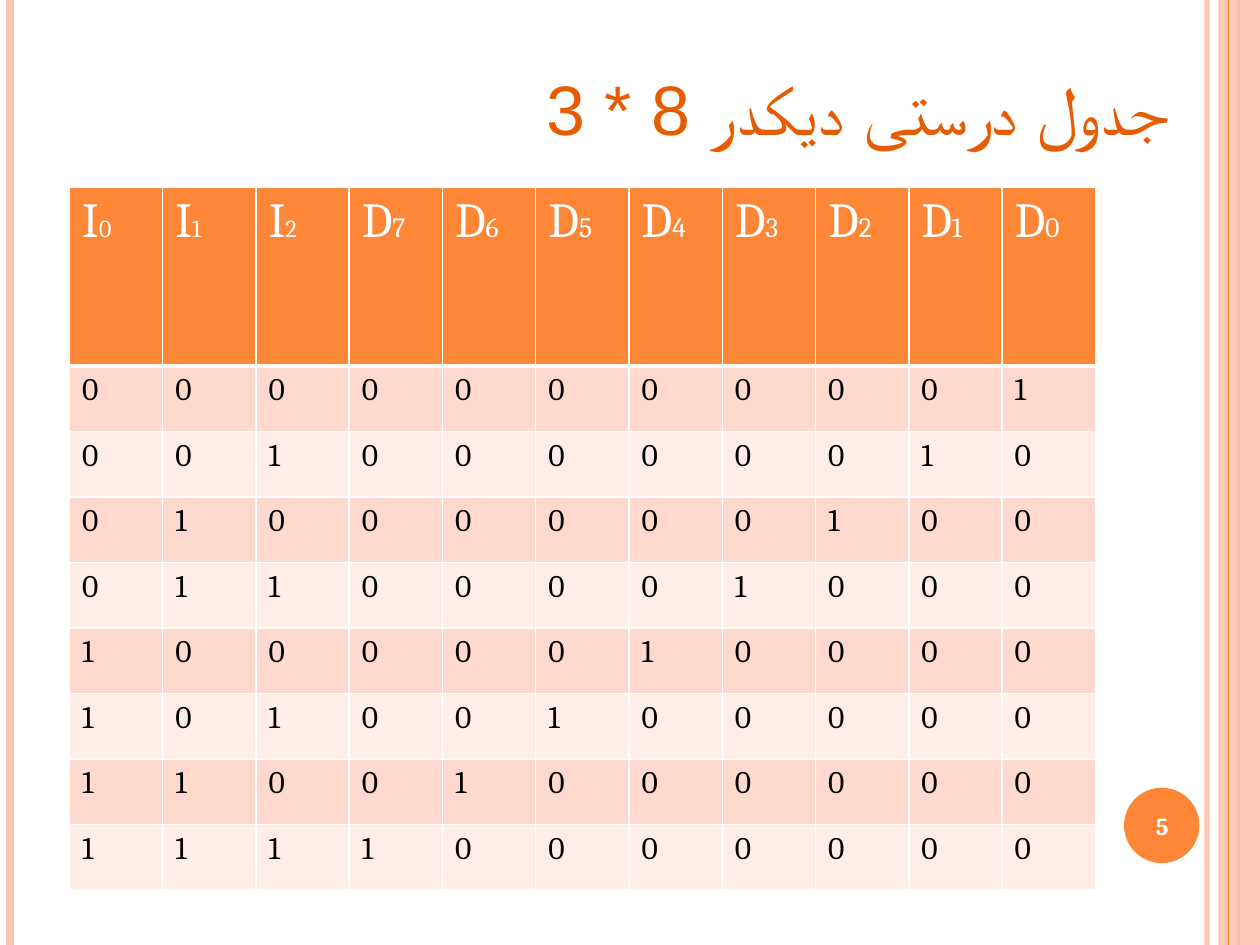
from lxml import etree
from pptx import Presentation
from pptx.dml.color import RGBColor
from pptx.enum.shapes import MSO_CONNECTOR, MSO_SHAPE
from pptx.enum.text import MSO_ANCHOR, PP_ALIGN
from pptx.oxml import parse_xml
from pptx.oxml.ns import nsdecls, qn
from pptx.util import Cm, Pt

STRAIGHT = MSO_CONNECTOR.STRAIGHT
RECTANGLE, OVAL = MSO_SHAPE.RECTANGLE, MSO_SHAPE.OVAL
MIDDLE = MSO_ANCHOR.MIDDLE
LEFT, CENTER, RIGHT = PP_ALIGN.LEFT, PP_ALIGN.CENTER, PP_ALIGN.RIGHT
ORANGE, PEACH, WHITE = "FE8637", "FEC3AE", "FFFFFF"
HEIGHT = 19.05


def color(value):
    return RGBColor.from_string(value)


def write(para, text, size=18, font="Cambria", ink="000000", bold=False, align=LEFT):
    para.alignment = align
    span = para.add_run()
    span.text = text
    span.font.size = Pt(size)
    span.font.name = font
    span.font.bold = bold
    span.font.color.rgb = color(ink)
    etree.SubElement(span.font._element, qn("a:cs"), typeface=font)


deck = Presentation()
deck.slide_width, deck.slide_height = Cm(25.4), Cm(HEIGHT)
page = deck.slides.add_slide(deck.slide_layouts[6])
shapes = page.shapes

band = shapes.add_shape(RECTANGLE, Cm(24.56), 0, Cm(0.84), Cm(HEIGHT))
badge = shapes.add_shape(OVAL, Cm(22.66), Cm(15.88), Cm(1.52), Cm(1.52))
for shape, fill in ((band, PEACH), (badge, ORANGE)):
    shape.shadow.inherit = False
    shape.fill.solid()
    shape.fill.fore_color.rgb = color(fill)
    shape.line.fill.background()
band_fill = band._element.spPr.find(qn("a:solidFill"))
etree.SubElement(band_fill[0], qn("a:alpha"), val="87000")

stripes = [(24.33, PEACH, 3), (0.21, PEACH, 4.5), (24.97, ORANGE, 1.5), (24.77, ORANGE, 0.75)]
for left, ink, width in stripes:
    stripe = shapes.add_connector(STRAIGHT, Cm(left), 0, Cm(left), Cm(HEIGHT))
    stripe.line.color.rgb = color(ink)
    stripe.line.width = Pt(width)
    etree.SubElement(stripe._element.spPr, qn("a:effectLst"))
    if left == 24.33:
        line_fill = stripe.line._ln.find(qn("a:solidFill"))
        etree.SubElement(line_fill[0], qn("a:alpha"), val="93000")
    if left == 24.97:
        band._element.addprevious(stripe._element)

number_box = shapes.add_textbox(Cm(22.58), Cm(15.93), Cm(1.7), Cm(1.45)).text_frame
number_box.word_wrap = True
number_box.vertical_anchor = MIDDLE
write(number_box.paragraphs[0], "5", size=14, ink=WHITE, bold=True, align=CENTER)

headings = [("I", bit) for bit in range(3)] + [("D", bit) for bit in range(7, -1, -1)]
frame = shapes.add_table(9, len(headings), Cm(1.4), Cm(3.78), Cm(20.65), Cm(14.2))
table = frame.table
for column in table.columns:
    column.width = Cm(1.88)
for row_index, row in enumerate(table.rows):
    row.height = Cm(1.32 if row_index else 3.6)
    value = row_index - 1
    for cell, (letter, bit) in zip(row.cells, headings):
        para = cell.text_frame.paragraphs[0]
        if row_index == 0:
            fill = ORANGE
            write(para, letter, size=28, ink=WHITE)
            write(para, str(bit), size=14 if letter == "I" else 16, ink=WHITE)
        else:
            fill = "FFD9CE" if row_index % 2 else "FFEDE8"
            digit = value >> (2 - bit) & 1 if letter == "I" else int(bit == value)
            write(para, str(digit))
        for side in ("L", "R", "T", "B"):
            width = Pt(3 if row_index == 0 and side == "B" else 1)
            cell._tc.get_or_add_tcPr().append(parse_xml(
                f'<a:ln{side} {nsdecls("a")} w="{width}"><a:solidFill>'
                f'<a:srgbClr val="{WHITE}"/></a:solidFill></a:ln{side}>'))
        cell.fill.solid()
        cell.fill.fore_color.rgb = color(fill)

title_box = shapes.add_textbox(Cm(4.75), Cm(1.19), Cm(19.46), Cm(1.96)).text_frame
title_box.word_wrap = True
write(title_box.paragraphs[0], "جدول درستی دیکدر 8 * 3 ", size=40, font="Arial",
      ink="E75C01", align=RIGHT)

deck.save("out.pptx")
